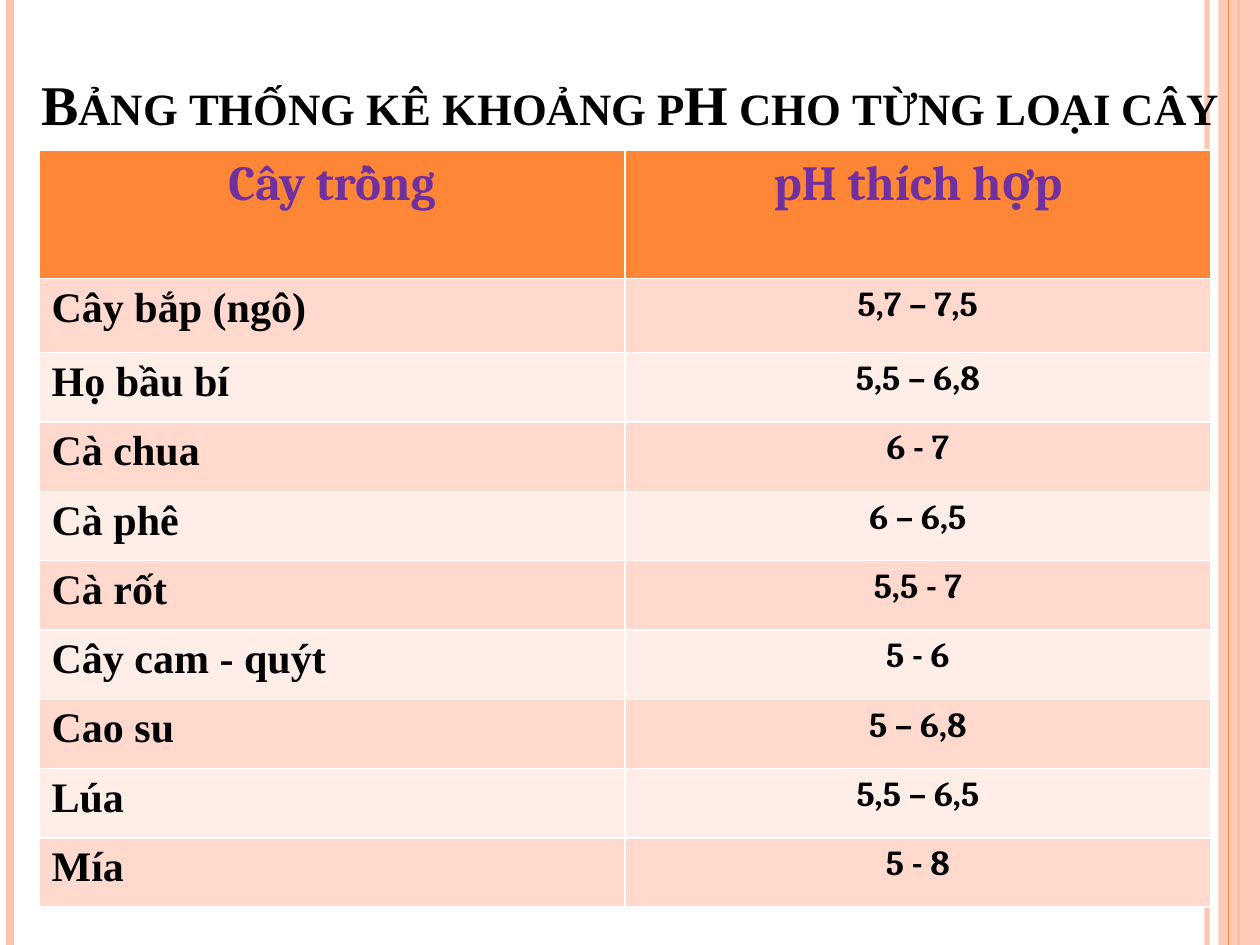
from dataclasses import dataclass
from lxml.etree import SubElement
from pptx import Presentation
from pptx.dml.color import RGBColor
from pptx.enum.shapes import MSO_CONNECTOR, MSO_SHAPE
from pptx.enum.text import MSO_ANCHOR, PP_ALIGN
from pptx.oxml.ns import qn
from pptx.util import Inches, Pt


@dataclass(frozen=True)
class Theme:
    ink: str = "000000"
    plum: str = "7030A0"
    deep: str = "FE8637"
    soft: str = "FEC3AE"
    bands: tuple = ("FFD9CE", "FFEDE8")
    serif: str = "Times New Roman"
    book: str = "Cambria"
    title: int = 32
    head: int = 28
    crop: int = 24
    range: int = 20


class Deck:
    def __init__(self, theme):
        self.theme = theme
        self.file = Presentation()
        self.file.slide_width, self.file.slide_height = Inches(10), Inches(7.5)
        self.slide = self.file.slides.add_slide(self.file.slide_layouts[5])

    def font(self, para, name, size, color):
        form = {"name": name, "size": Pt(size), "bold": True}
        font = para.runs[0].font
        for key, value in form.items():
            setattr(font, key, value)
        font.color.rgb = RGBColor.from_string(color)

    def fill(self, item, color, alpha=100):
        item.fill.solid()
        item.fill.fore_color.rgb = RGBColor.from_string(color)
        if alpha < 100:
            self.fade(item.fill._xPr, alpha)

    def fade(self, node, alpha):
        color = next(node.iter(qn("a:srgbClr")))
        SubElement(color, qn("a:alpha"), val=str(alpha * 1000))

    def rule(self, x, width, color, alpha=100):
        line = self.slide.shapes.add_connector(
            MSO_CONNECTOR.STRAIGHT, Inches(x), 0, Inches(x), Inches(7.5))
        line.line.width = Pt(width)
        self.fill(line.line, color, alpha)
        SubElement(line._element.spPr, qn("a:effectLst"))

    def band(self, x, width, color, alpha):
        box = self.slide.shapes.add_shape(
            MSO_SHAPE.RECTANGLE, Inches(x), 0, Inches(width), Inches(7.5))
        box.shadow.inherit = False
        box.line.fill.background()
        self.fill(box, color, alpha)

    def title(self, text, left, top, width, height):
        shape = self.slide.shapes.title
        spot = {"left": left, "top": top, "width": width, "height": height}
        for key, value in spot.items():
            setattr(shape, key, Inches(value))
        frame = shape.text_frame
        frame.text = text
        frame.word_wrap = True
        frame.vertical_anchor = MSO_ANCHOR.MIDDLE
        para = frame.paragraphs[0]
        para.alignment = PP_ALIGN.CENTER
        self.font(para, self.theme.serif, self.theme.title, self.theme.ink)
        para.runs[0].font._element.set("cap", "small")
        self.slide.shapes._spTree.append(shape._element)

    def cell(self, cell, text, fill, align, *font):
        cell.text = text
        self.fill(cell, fill)
        para = cell.text_frame.paragraphs[0]
        para.alignment = align
        self.font(para, *font)

    def table(self, head, rows, left, top, width, highs):
        look = self.theme
        grid = self.slide.shapes.add_table(
            len(highs), len(head), Inches(left), Inches(top),
            Inches(width), Inches(sum(highs))).table
        for row, high in zip(grid.rows, highs):
            row.height = Inches(high)
        for col, text in enumerate(head):
            self.cell(grid.cell(0, col), text, look.deep, PP_ALIGN.CENTER,
                      look.book, look.head, look.plum)
        for row, (crop, span) in enumerate(rows, 1):
            fill = look.bands[(row - 1) % 2]
            self.cell(grid.cell(row, 0), crop, fill, PP_ALIGN.LEFT,
                      look.serif, look.crop, look.ink)
            self.cell(grid.cell(row, 1), span, fill, PP_ALIGN.CENTER,
                      look.book, look.range, look.ink)


def main():
    theme = Theme()
    deck = Deck(theme)
    deck.rule(9.58, 3, theme.soft, 93)
    deck.rule(0.08, 4.5, theme.soft)
    deck.rule(9.83, 1.5, theme.deep)
    deck.band(9.67, 0.33, theme.soft, 87)
    deck.rule(9.75, 0.75, theme.deep)
    deck.title("Bảng thống kê khoảng pH cho từng loại cây", 0, 0.47, 10, 0.69)
    crops = [
        ("Cây bắp (ngô)", "5,7 – 7,5"),
        ("Họ bầu bí", "5,5 – 6,8"),
        ("Cà chua", "6 - 7"),
        ("Cà phê", "6 – 6,5"),
        ("Cà rốt", "5,5 - 7"),
        ("Cây cam - quýt", "5 - 6"),
        ("Cao su", "5 – 6,8"),
        ("Lúa", "5,5 – 6,5"),
        ("Mía", "5 - 8"),
    ]
    highs = [1.02, 0.59] + [0.55] * (len(crops) - 1)
    deck.table(("Cây trồng", "pH thích hợp"), crops, 0.31, 1.19, 9.3, highs)
    deck.file.save("out.pptx")


if __name__ == "__main__":
    main()
